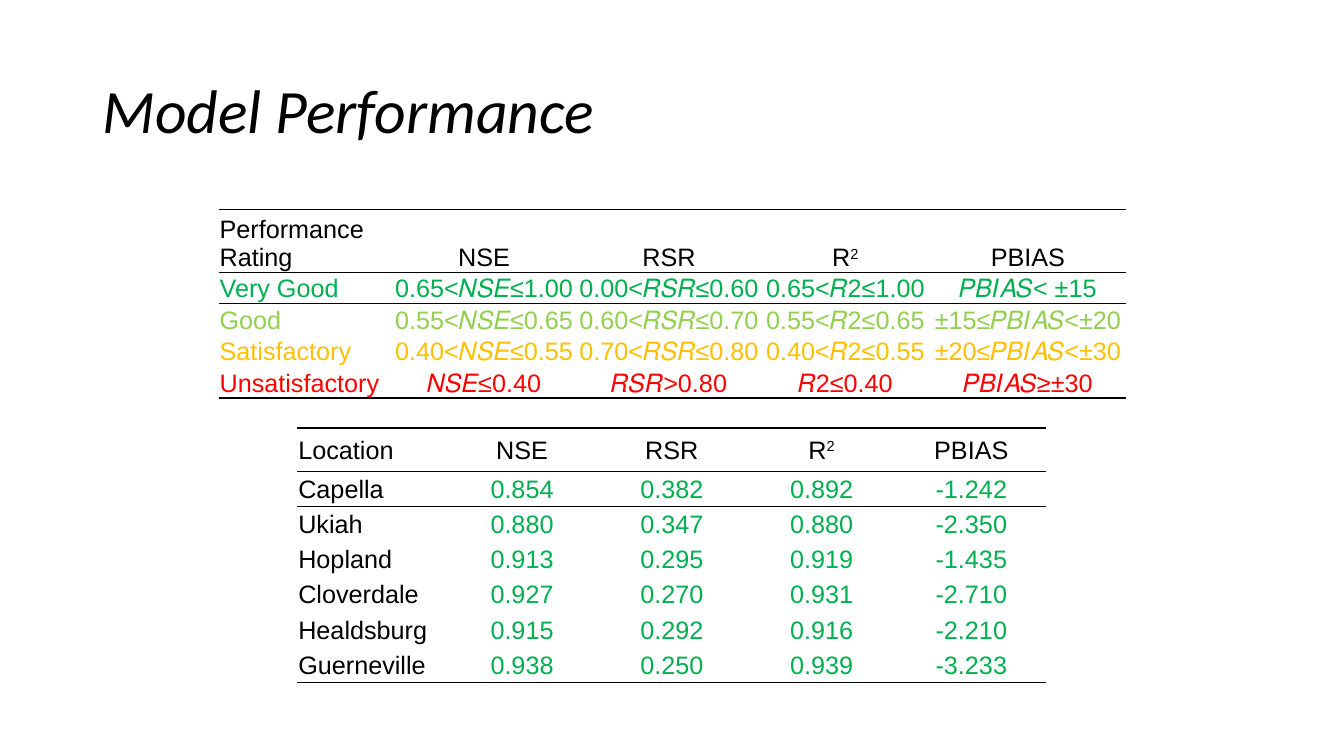
"""Build the Model Performance slide with its rating scale and results by location."""
from lxml.etree import SubElement
from pptx import Presentation
from pptx.dml.color import RGBColor
from pptx.enum.text import MSO_ANCHOR as Anchor, PP_ALIGN as Align
from pptx.oxml.ns import qn
from pptx.util import Pt

COLORS = {"ink": "000000", "very good": "00B050", "good": "92D050",
          "satisfactory": "FFC000", "unsatisfactory": "FF0000"}
PLAIN_STYLE = "{2D5ABB26-0587-4C30-8999-92F81FD0307C}"
TITLE = "Model Performance"
METRICS = ["NSE", "RSR", "R^2", "PBIAS"]

RATINGS = [
    ("Very Good", "0.65<𝑁𝑆𝐸≤1.00", "0.00<𝑅𝑆𝑅≤0.60", "0.65<𝑅2≤1.00", "𝑃𝐵𝐼𝐴𝑆< ±15"),
    ("Good", "0.55<𝑁𝑆𝐸≤0.65", "0.60<𝑅𝑆𝑅≤0.70", "0.55<𝑅2≤0.65", "±15≤𝑃𝐵𝐼𝐴𝑆<±20"),
    ("Satisfactory", "0.40<𝑁𝑆𝐸≤0.55", "0.70<𝑅𝑆𝑅≤0.80", "0.40<𝑅2≤0.55", "±20≤𝑃𝐵𝐼𝐴𝑆<±30"),
    ("Unsatisfactory", "𝑁𝑆𝐸≤0.40", "𝑅𝑆𝑅>0.80", "𝑅2≤0.40", "𝑃𝐵𝐼𝐴𝑆≥±30"),
]
LOCATIONS = [
    ("Capella", "0.854", "0.382", "0.892", "-1.242"),
    ("Ukiah", "0.880", "0.347", "0.880", "-2.350"),
    ("Hopland", "0.913", "0.295", "0.919", "-1.435"),
    ("Cloverdale", "0.927", "0.270", "0.931", "-2.710"),
    ("Healdsburg", "0.915", "0.292", "0.916", "-2.210"),
    ("Guerneville", "0.938", "0.250", "0.939", "-3.233"),
]
TABLES = [
    dict(rows=[["Location", *METRICS], *LOCATIONS],
         label_colors=["ink"] * 7, value_colors=["ink"] + ["very good"] * 6,
         left=212.4, top=306, widths=[107] * 5, heights=[31] + [25.1] * 6,
         anchor=Anchor.MIDDLE, outer=1.5, inner=1),
    dict(rows=[["Performance \nRating", *METRICS], *RATINGS],
         label_colors=["ink"] + [rating[0].lower() for rating in RATINGS],
         value_colors=["ink"] + [rating[0].lower() for rating in RATINGS],
         left=156.2, top=149.8, widths=[123, 133.2, 131, 121, 139.8],
         heights=[44.6, 22.3, 22.3, 22.3, 23],
         anchor=Anchor.BOTTOM, outer=1, inner=0.5),
]


def add_run(paragraph, words, color, font, size):
    run = paragraph.add_run()
    run.text = words
    run.font.name, run.font.size = font, Pt(size)
    run.font.color.rgb = RGBColor.from_string(COLORS[color])
    return run


def write_cell(cell, words, color, align, anchor):
    cell.margin_left = cell.margin_right = cell.margin_top = Pt(0.7)
    cell.margin_bottom = 0
    cell.vertical_anchor = anchor
    paragraph = cell.text_frame.paragraphs[0]
    paragraph.alignment = align
    for number, line in enumerate(words.split("\n")):
        if number:
            paragraph.add_line_break()
        base, _, power = line.partition("^")
        add_run(paragraph, base, color, "Arial", 18)
        if power:
            raised = add_run(paragraph, power, color, "Arial", 18)
            raised.font._element.set("baseline", "30000")


def add_rule(cell, side, width):
    rule = SubElement(cell._tc.get_or_add_tcPr(), qn(f"a:ln{side}"), w=str(Pt(width)))
    SubElement(SubElement(rule, qn("a:solidFill")), qn("a:srgbClr"), val=COLORS["ink"])


def add_ruled_table(slide, rows, label_colors, value_colors, left, top,
                    widths, heights, anchor, outer, inner):
    table = slide.shapes.add_table(len(rows), len(widths), Pt(left), Pt(top),
                                   Pt(sum(widths)), Pt(sum(heights))).table
    table.first_row = table.horz_banding = False
    table._tbl.tblPr.find(qn("a:tableStyleId")).text = PLAIN_STYLE
    for column, width in zip(table.columns, widths):
        column.width = Pt(width)
    for row, height in zip(table.rows, heights):
        row.height = Pt(height)
    top_rules = {0: outer, 1: inner}
    bottom_rules = {0: inner, len(rows) - 1: outer}
    for r, entries in enumerate(rows):
        for c, words in enumerate(entries):
            cell = table.cell(r, c)
            color = value_colors[r] if c else label_colors[r]
            write_cell(cell, words, color, Align.CENTER if c else Align.LEFT, anchor)
            for side, rules in (("T", top_rules), ("B", bottom_rules)):
                if r in rules:
                    add_rule(cell, side, rules[r])
            cell.fill.background()


def main():
    deck = Presentation()
    deck.slide_width, deck.slide_height = Pt(960), Pt(540)
    slide = deck.slides.add_slide(deck.slide_layouts[5])
    title = slide.shapes.title
    title.left, title.top, title.width, title.height = Pt(66), Pt(28.8), Pt(828), Pt(104.4)
    title.text_frame.vertical_anchor = Anchor.MIDDLE
    heading = title.text_frame.paragraphs[0]
    heading.alignment, heading.line_spacing = Align.LEFT, 0.9
    add_run(heading, TITLE, "ink", "Calibri", 44).font.italic = True
    for table in TABLES:
        add_ruled_table(slide, **table)
    deck.save("out.pptx")


if __name__ == "__main__":
    main()
